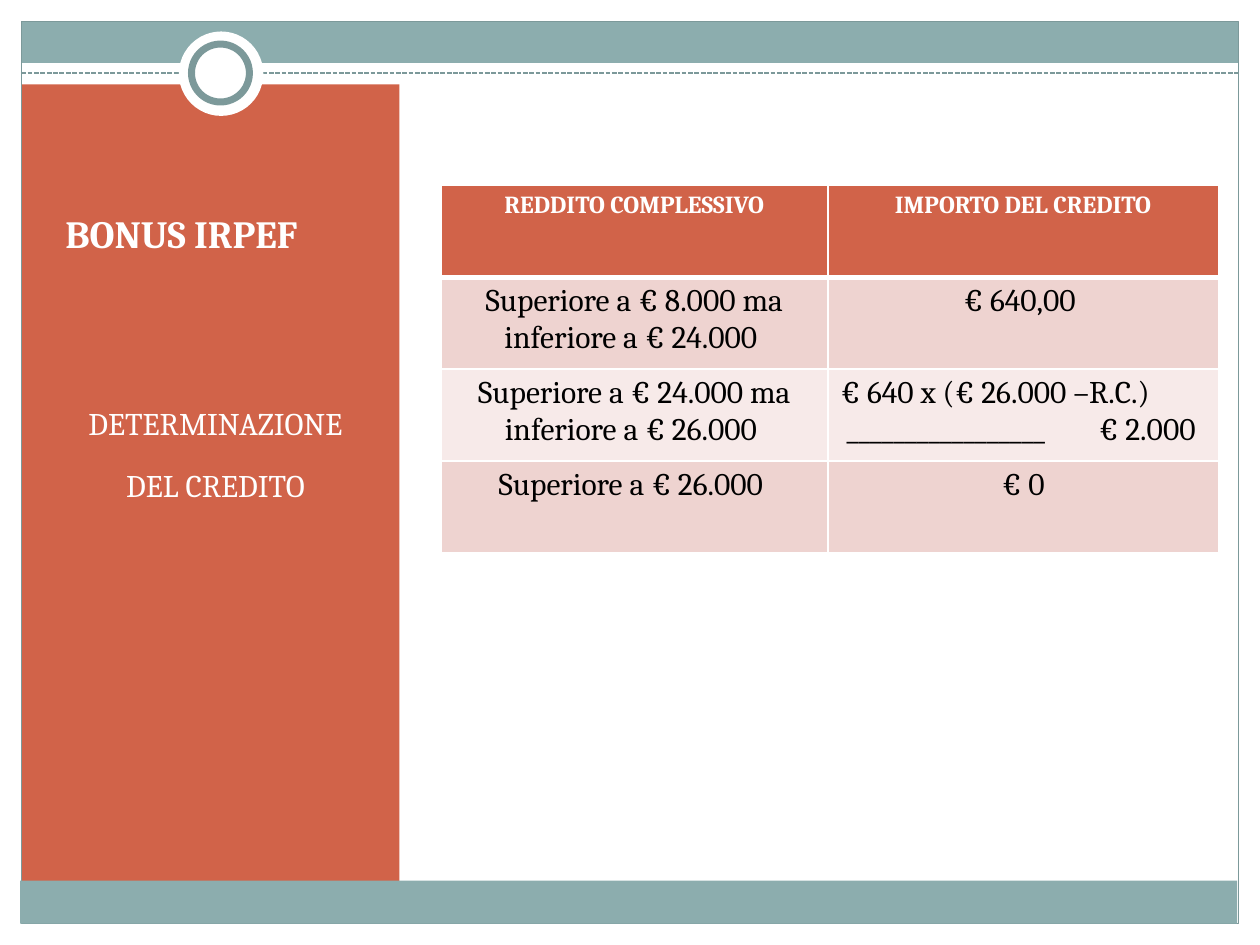
from lxml import etree
from pptx import Presentation
from pptx import util as u
from pptx.dml.color import RGBColor
from pptx.enum import dml, shapes, text
from pptx.oxml import ns

COLORS = {"teal": "8CADAE", "line": "7C999A", "accent": "D16349", "white": "FFFFFF",
          "black": "000000", "band": "EED3D0", "light": "F7EAE9"}
CENTER = text.PP_ALIGN.CENTER


def rgb(name):
    return RGBColor.from_string(COLORS[name])


def write(frame, lines, size, color, bold=False, align=CENTER):
    """Fill a text frame with one paragraph per line."""
    frame.word_wrap = True
    for index, line in enumerate(lines):
        paragraph = frame.paragraphs[0] if index == 0 else frame.add_paragraph()
        paragraph.alignment = align
        run = paragraph.add_run()
        run.text = line
        font_format = {"name": "Cambria", "size": u.Pt(size), "bold": bold}
        for key, value in font_format.items():
            setattr(run.font, key, value)
        run.font.color.rgb = rgb(color)


presentation = Presentation()
presentation.slide_width, presentation.slide_height = u.Inches(10), u.Inches(7.5)
slide = presentation.slides.add_slide(presentation.slide_layouts[6])

# Frame, side panel and ring: kind, box, fill, line width
RECT, OVAL = shapes.MSO_SHAPE.RECTANGLE, shapes.MSO_SHAPE.OVAL
decorations = [
    (RECT, (0.17, 0.17, 9.66, 0.33), "teal", 0),
    (RECT, (0, 7.33, 10, 0.17), "white", 0),
    (RECT, (9.83, 0, 0.17, 7.5), "white", 0),
    (RECT, (0, 0, 10, 0.13), "white", 0),
    (RECT, (0, 0, 0.17, 7.5), "white", 0),
    (RECT, (0.17, 0.67, 3, 6.42), "accent", 0),
    (RECT, (0.17, 0.17, 9.66, 7.16), None, 0.75),
    ("dashed line", (0.17, 0.58, 9.83, 0.58), None, 0.9),
    (OVAL, (1.42, 0.25, 0.67, 0.67), "white", 0),
    (OVAL, (1.52, 0.35, 0.46, 0.46), "white", 4),
    (RECT, (0.16, 6.99, 9.66, 0.34), "teal", 0),
]
for kind, box, fill, line_width in decorations:
    box = [u.Inches(value) for value in box]
    if kind == "dashed line":
        shape = slide.shapes.add_connector(shapes.MSO_CONNECTOR.STRAIGHT, *box)
        shape.line.dash_style = dml.MSO_LINE.SQUARE_DOT
        properties = shape.element.find(ns.qn("p:spPr"))
        etree.SubElement(properties, ns.qn("a:effectLst"))
    else:
        shape = slide.shapes.add_shape(kind, *box)
        shape.shadow.inherit = False
        if fill:
            shape.fill.solid()
            shape.fill.fore_color.rgb = rgb(fill)
        else:
            shape.fill.background()
    if line_width:
        shape.line.color.rgb = rgb("line")
        shape.line.width = u.Pt(line_width)
    else:
        shape.line.fill.background()

# Side panel text
panel_left, panel_width = u.Inches(0.42), u.Inches(2.58)
title = slide.shapes.add_textbox(panel_left, u.Inches(1), panel_width, u.Inches(1.08))
title.text_frame.vertical_anchor = text.MSO_ANCHOR.BOTTOM
write(title.text_frame, ["BONUS IRPEF"], 22, "white", True, text.PP_ALIGN.LEFT)

subtitle = slide.shapes.add_textbox(panel_left, u.Inches(2.17), panel_width, u.Inches(4.53))
subtitle.text_frame.margin_top = u.Inches(1.04)
write(subtitle.text_frame, ["DETERMINAZIONE", "DEL CREDITO"], 18, "white")
subtitle.text_frame.paragraphs[0].space_after = u.Pt(13.6)

# Credit table
rows = [
    ("accent", ["REDDITO COMPLESSIVO"], ["IMPORTO DEL CREDITO"]),
    ("band", ["Superiore a € 8.000 ma inferiore a € 24.000 "], ["€ 640,00 "]),
    ("light", ["Superiore a € 24.000 ma inferiore a € 26.000 "],
     ["€ 640 x (€ 26.000 –R.C.)", "_________________\t€ 2.000 "]),
    ("band", ["Superiore a € 26.000 "], ["€ 0"]),
]
row_height = 0.73
table = slide.shapes.add_table(len(rows), 2, u.Inches(3.5), u.Inches(1.47),
                               u.Inches(6.17), u.Inches(row_height * len(rows))).table
for column, width in zip(table.columns, (3.07, 3.1)):
    column.width = u.Inches(width)

for row_index, (fill, *contents) in enumerate(rows):
    table.rows[row_index].height = u.Inches(row_height)
    header = row_index == 0
    for column_index, lines in enumerate(contents):
        cell = table.cell(row_index, column_index)
        align = CENTER if len(lines) == 1 else text.PP_ALIGN.LEFT
        write(cell.text_frame, lines, 14 if header else 18,
              "white" if header else "black", header, align)
        properties = cell._tc.get_or_add_tcPr()
        for side in ("L", "R", "T", "B"):
            thick = (header and side == "B") or (row_index == 1 and side == "T")
            border = etree.SubElement(properties, ns.qn(f"a:ln{side}"),
                                      w=str(u.Pt(3 if thick else 1)))
            solid = etree.SubElement(border, ns.qn("a:solidFill"))
            etree.SubElement(solid, ns.qn("a:srgbClr"), val=COLORS["white"])
        cell.fill.solid()
        cell.fill.fore_color.rgb = rgb(fill)

# The divisor stands to the right of the fraction rule
divisor = table.cell(2, 1).text_frame.paragraphs[1]._p.get_or_add_pPr()
divisor.set("marL", str(u.Inches(0.05)))
divisor.set("indent", "0")
tabs = etree.SubElement(divisor, ns.qn("a:tabLst"))
etree.SubElement(tabs, ns.qn("a:tab"), pos=str(u.Inches(2.03)), algn="l")

presentation.save("out.pptx")
